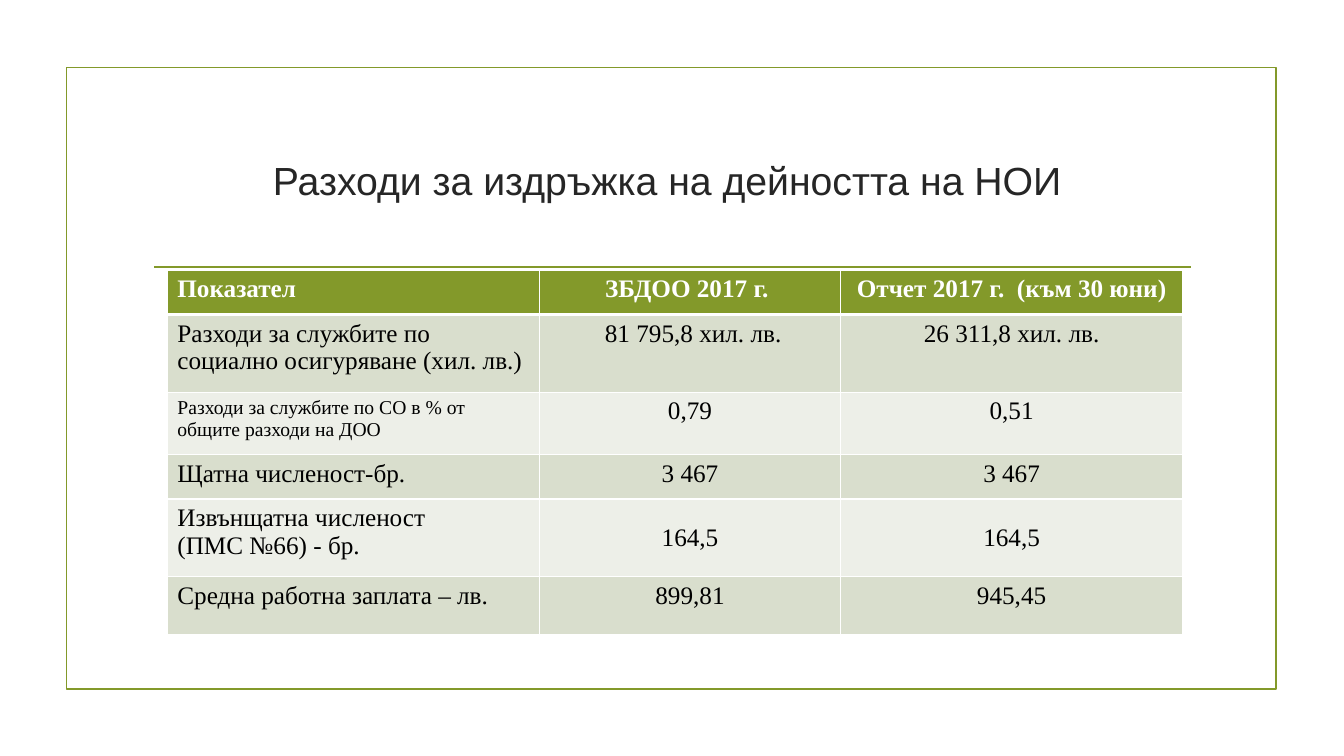
from lxml.etree import SubElement
from pptx import Presentation
from pptx.dml.color import RGBColor
from pptx.enum.shapes import MSO_CONNECTOR, MSO_SHAPE
from pptx.enum.text import MSO_ANCHOR, PP_ALIGN
from pptx.oxml.ns import qn
from pptx.util import Inches, Pt

GREEN, WHITE, BLACK, DARK = "83992A", "FFFFFF", "000000", "262626"
BANDS = ["D9DECD", "EDEFE8"]
COLS = [27.68, 22.43, 25.43]
ROWS = [5.87, 10.27, 8.27, 5.87, 10.27, 7.73]
CELLS = [
    ["Показател", "ЗБДОО 2017 г. ", "Отчет 2017 г.  (към 30 юни)"],
    ["Разходи за службите по социално осигуряване (хил. лв.)",
     " 81 795,8 хил. лв.", "26 311,8 хил. лв."],
    ["Разходи за службите по СО в % от общите разходи на ДОО", "0,79", "0,51"],
    ["Щатна численост-бр.", "3 467", "3 467"],
    ["Извънщатна численост \v(ПМС №66) - бр.", "164,5", "164,5"],
    ["Средна работна заплата – лв.", "899,81", "945,45"],
]
SMALL_ROW, MIDDLE_ROW = 2, 4


def color(code):
    return RGBColor.from_string(code)


class Page:
    """Draws on one slide; lengths are percentages of its width and height."""

    def __init__(self, deck):
        self.deck = deck
        self.shapes = deck.slides.add_slide(deck.slide_layouts[6]).shapes

    def across(self, share):
        return round(self.deck.slide_width * share / 100)

    def down(self, share):
        return round(self.deck.slide_height * share / 100)

    def area(self, x, y, w, h):
        return self.across(x), self.down(y), self.across(w), self.down(h)

    def stroke(self, line):
        line.color.rgb = color(GREEN)
        line.width = Pt(1.25)

    def frame(self, *area):
        box = self.shapes.add_shape(MSO_SHAPE.RECTANGLE, *self.area(*area))
        box.shadow.inherit = False
        box.fill.background()
        self.stroke(box.line)

    def rule(self, left, right, y):
        line = self.shapes.add_connector(
            MSO_CONNECTOR.STRAIGHT, self.across(left), self.down(y),
            self.across(right), self.down(y))
        SubElement(line._element.spPr, qn("a:effectLst"))
        self.stroke(line.line)

    def label(self, frame, text, font, size, ink, bold=False, align=PP_ALIGN.CENTER):
        frame.text = text
        frame.word_wrap = True
        para = frame.paragraphs[0]
        para.alignment = align
        for run in para.runs:
            run.font.name = font
            run.font.size = Pt(size)
            run.font.bold = bold
            run.font.color.rgb = color(ink)

    def title(self, text, *area):
        frame = self.shapes.add_textbox(*self.area(*area)).text_frame
        self.label(frame, text, "Arial", 28, DARK)
        frame.vertical_anchor = MSO_ANCHOR.MIDDLE

    def border(self, cell, row):
        """Thin white edges, thick between the header and the body."""
        props = cell._tc.get_or_add_tcPr()
        for side in "LRTB":
            thick = (row, side) in [(0, "B"), (1, "T")]
            edge = SubElement(props, qn(f"a:ln{side}"), w=str(Pt(3 if thick else 1)))
            SubElement(SubElement(edge, qn("a:solidFill")), qn("a:srgbClr"), val=WHITE)

    def table(self, x, y, cols, rows, texts):
        area = self.area(x, y, sum(cols), sum(rows))
        grid = self.shapes.add_table(len(rows), len(cols), *area).table
        for col, share in zip(grid.columns, cols):
            col.width = self.across(share)
        for row, share in enumerate(rows):
            grid.rows[row].height = self.down(share)
            head = row == 0
            for col, text in enumerate(texts[row]):
                cell = grid.cell(row, col)
                self.border(cell, row)
                cell.fill.solid()
                cell.fill.fore_color.rgb = color(GREEN if head else BANDS[(row - 1) % 2])
                first = col == 0
                self.label(cell.text_frame, text, "Times New Roman",
                           14 if first and row == SMALL_ROW else 18,
                           WHITE if head else BLACK, head,
                           PP_ALIGN.LEFT if first else PP_ALIGN.CENTER)
                if row == MIDDLE_ROW and not first:
                    cell.vertical_anchor = MSO_ANCHOR.MIDDLE


def main():
    deck = Presentation()
    deck.slide_width, deck.slide_height = Inches(13.33), Inches(7.5)
    page = Page(deck)
    page.frame(4.95, 8.93, 90, 82.27)
    page.rule(11.48, 88.6, 35.33)
    page.title("Разходи за издръжка на дейността на НОИ ", 10.65, 14.27, 78.77, 19.07)
    page.table(12.45, 35.73, COLS, ROWS, CELLS)
    deck.save("out.pptx")


if __name__ == "__main__":
    main()
